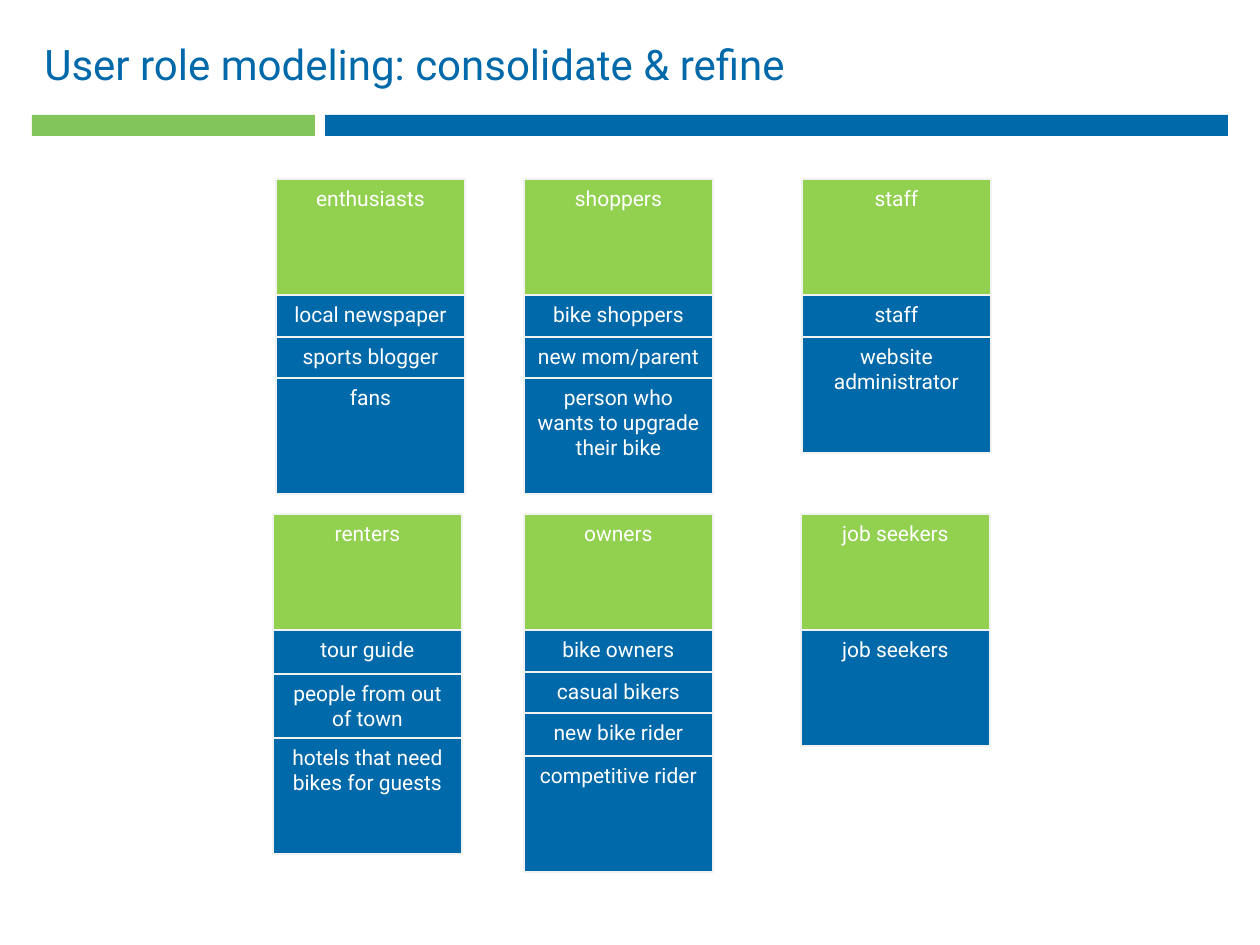
"""Build a slide of user roles consolidated into six stacks of cards."""
from pptx import Presentation
from pptx.dml.color import RGBColor
from pptx.enum.shapes import MSO_SHAPE
from pptx.enum.text import MSO_ANCHOR, PP_ALIGN
from pptx.util import Pt

PX = 914400 / 126
FONT = "Roboto"
COLORS = {"blue": "0069AA", "bar": "82C55B", "role": "92D050", "edge": "F2F2F2", "white": "FFFFFF"}
TITLE = "User role modeling: consolidate & refine"
BARS = [("blue", 325, 903), ("bar", 32, 283)]
CARD_WIDTH, CARD_HEIGHT = 189, 116
TOP_ROW, BOTTOM_ROW = 179, 514

# Each stack: left, top, role, then members with the visible height of each.
STACKS = [
    (276, TOP_ROW, "enthusiasts", [("local newspaper", 42), ("sports blogger", 41), ("fans", 116)]),
    (524, TOP_ROW, "shoppers", [("bike shoppers", 42), ("new mom/parent", 41),
                                ("person who wants to upgrade their bike", 116)]),
    (802, TOP_ROW, "staff", [("staff", 42), ("website administrator", 116)]),
    (273, BOTTOM_ROW, "renters", [("tour guide", 44), ("people from out of town", 64),
                                  ("hotels that need bikes for guests", 116)]),
    (524, BOTTOM_ROW, "owners", [("bike owners", 42), ("casual bikers", 41),
                                 ("new bike rider", 43), ("competitive rider", 116)]),
    (801, BOTTOM_ROW, "job seekers", [("job seekers", 116)]),
]


def px(*lengths):
    return [round(length * PX) for length in lengths]


def color(name):
    return RGBColor.from_string(COLORS[name])


def write(box, text, size, ink, align=PP_ALIGN.LEFT):
    frame = box.text_frame
    frame.word_wrap = True
    frame.vertical_anchor = MSO_ANCHOR.TOP
    para = frame.paragraphs[0]
    para.alignment = align
    span = para.add_run()
    span.text = text
    span.font.name = FONT
    span.font.size = Pt(size)
    span.font.color.rgb = color(ink)


def add_rectangle(page, left, top, width, height, fill, edge=None):
    box = page.shapes.add_shape(MSO_SHAPE.RECTANGLE, *px(left, top, width, height))
    box.shadow.inherit = False
    box.fill.solid()
    box.fill.fore_color.rgb = color(fill)
    if edge:
        box.line.color.rgb = color(edge)
        box.line.width = Pt(1)
    else:
        box.line.fill.background()
    return box


def add_card(page, left, top, text, fill):
    card = add_rectangle(page, left, top, CARD_WIDTH, CARD_HEIGHT, fill, edge="edge")
    write(card, text, size=12, ink="white", align=PP_ALIGN.CENTER)


def main():
    deck = Presentation()
    deck.slide_width, deck.slide_height = px(1260, 945)
    page = deck.slides.add_slide(deck.slide_layouts[6])
    for fill, left, width in BARS:
        add_rectangle(page, left, 115, width, 21, fill)
    write(page.shapes.add_textbox(*px(32, 32, 1134, 63)), TITLE, size=24, ink="blue")
    for left, top, role, members in STACKS:
        add_card(page, left, top, role, "role")
        top += CARD_HEIGHT
        for text, step in members:
            add_card(page, left, top, text, "blue")
            top += step
    deck.save("out.pptx")


if __name__ == "__main__":
    main()
